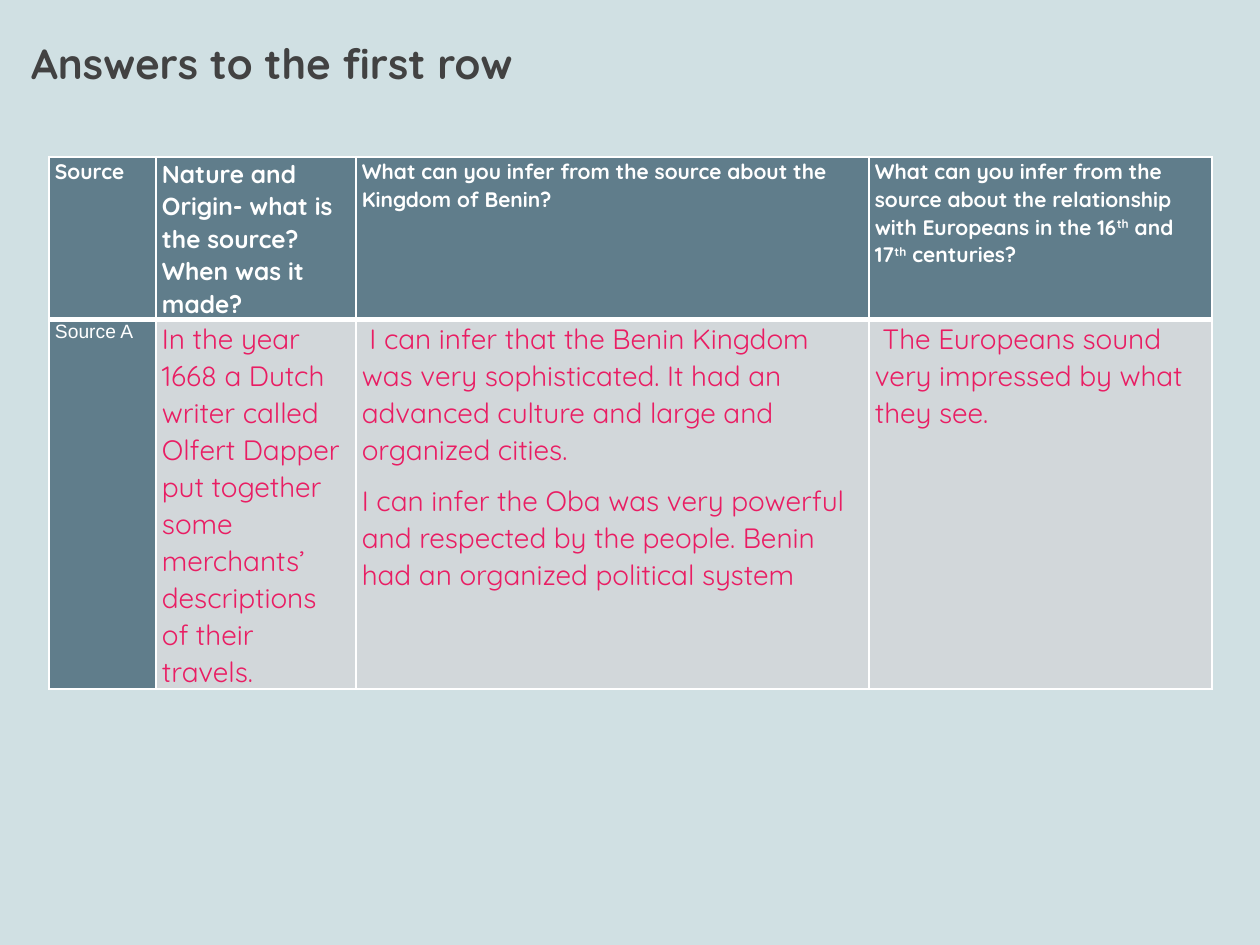
import dataclasses

import lxml.etree
import pptx
import pptx.dml.color
import pptx.enum.text
import pptx.oxml.ns
import pptx.util

PX = 7257
WHITE = "FFFFFF"
PINK = "E91D63"
SLATE = "607D8B"
PALE = "D2D7DA"
SIDES = ("lnL", "lnR", "lnT", "lnB")


@dataclasses.dataclass(frozen=True)
class TextStyle:
    size: int
    color: str = WHITE
    name: str = "Quicksand"
    bold: bool = False


@dataclasses.dataclass(frozen=True)
class CellContent:
    paragraphs: tuple[tuple[str, ...], ...]
    style: TextStyle
    fill: str = SLATE


HEADING = TextStyle(12, bold=True)
LARGE_HEADING = TextStyle(14, bold=True)
ROW_LABEL = TextStyle(11, name="Arial")
ANSWER = TextStyle(16, PINK)

COLUMN_WIDTHS = (107, 200, 513, 343)
ROW_HEIGHTS = (57, 127)
ROWS = (
    (
        CellContent((("Source",),), HEADING),
        CellContent((("Nature and Origin- what is the source? When was it made?",),), LARGE_HEADING),
        CellContent((("What can you infer from the source about the Kingdom of Benin?",),), HEADING),
        CellContent(
            ((
                "What can you infer from the source about the relationship with Europeans in the 16",
                "th", " and 17", "th", " centuries?",
            ),),
            HEADING,
        ),
    ),
    (
        CellContent((("Source A",),), ROW_LABEL),
        CellContent(
            (("In the year 1668 a Dutch writer called Olfert Dapper put together some "
              "merchants’ descriptions of their travels.",),),
            ANSWER, PALE,
        ),
        CellContent(
            (
                (" I can infer that the Benin Kingdom was very sophisticated. It had an "
                 "advanced culture and large and organized cities.",),
                ("I can infer the Oba was very powerful and respected by the people. "
                 "Benin had an organized political system",),
            ),
            ANSWER, PALE,
        ),
        CellContent(((" The Europeans sound very impressed by what they see.",),), ANSWER, PALE),
    ),
)


def px(length: int) -> pptx.util.Emu:
    return pptx.util.Emu(length * PX)


def rgb(value: str) -> pptx.dml.color.RGBColor:
    return pptx.dml.color.RGBColor.from_string(value)


def apply_format(target: object, values: dict) -> None:
    for name, value in values.items():
        setattr(target, name, value)


def apply_style(font: object, style: TextStyle) -> None:
    apply_format(font, {"size": pptx.util.Pt(style.size), "name": style.name, "bold": style.bold})
    font.color.rgb = rgb(style.color)


def add_borders(cell: object, widths: dict[str, int]) -> None:
    properties = cell._tc.get_or_add_tcPr()
    for side in SIDES:
        line = lxml.etree.SubElement(
            properties, pptx.oxml.ns.qn(f"a:{side}"), w=str(pptx.util.Pt(widths.get(side, 1)))
        )
        fill = lxml.etree.SubElement(line, pptx.oxml.ns.qn("a:solidFill"))
        lxml.etree.SubElement(fill, pptx.oxml.ns.qn("a:srgbClr"), val=WHITE)


def fill_cell(cell: object, content: CellContent, widths: dict[str, int]) -> None:
    apply_format(cell, {
        "margin_left": px(6), "margin_right": px(6), "margin_top": 0, "margin_bottom": 0,
        "vertical_anchor": pptx.enum.text.MSO_ANCHOR.TOP,
    })
    add_borders(cell, widths)
    cell.fill.solid()
    cell.fill.fore_color.rgb = rgb(content.fill)
    for index, texts in enumerate(content.paragraphs):
        para = cell.text_frame.add_paragraph() if index else cell.text_frame.paragraphs[0]
        apply_format(para, {"line_spacing": 1.06, "space_after": pptx.util.Pt(8)})
        for text in texts:
            span = para.add_run()
            span.text = text
            apply_style(span.font, content.style)
            if text == "th":
                span._r.get_or_add_rPr().set("baseline", "30000")


def add_title(page: object) -> None:
    title = page.shapes.title
    apply_format(title, {"left": px(18), "top": px(42), "width": px(567), "height": px(59)})
    apply_format(title.text_frame, {
        "text": "Answers to the first row", "word_wrap": True,
        "auto_size": pptx.enum.text.MSO_AUTO_SIZE.NONE,
        "vertical_anchor": pptx.enum.text.MSO_ANCHOR.BOTTOM,
        "margin_left": px(13), "margin_right": px(13),
        "margin_top": px(13), "margin_bottom": px(13),
    })
    para = title.text_frame.paragraphs[0]
    para.alignment = pptx.enum.text.PP_ALIGN.LEFT
    apply_style(para.runs[0].font, TextStyle(24, "424242", bold=True))


def add_answer_table(page: object) -> None:
    frame = page.shapes.add_table(
        len(ROWS), len(COLUMN_WIDTHS), px(49), px(157), px(sum(COLUMN_WIDTHS)), px(508)
    )
    table = frame.table
    for column, width in zip(table.columns, COLUMN_WIDTHS):
        column.width = px(width)
    for row, height in zip(table.rows, ROW_HEIGHTS):
        row.height = px(height)
    frame.height = px(508)
    for row, contents, widths in zip(table.rows, ROWS, ({"lnB": 3}, {"lnT": 3})):
        for cell, content in zip(row.cells, contents):
            fill_cell(cell, content, widths)


def main() -> None:
    deck = pptx.Presentation()
    apply_format(deck, {"slide_width": px(1260), "slide_height": px(945)})
    page = deck.slides.add_slide(deck.slide_layouts[5])
    page.background.fill.solid()
    page.background.fill.fore_color.rgb = rgb("D0E0E3")
    add_title(page)
    add_answer_table(page)
    deck.save("out.pptx")


if __name__ == "__main__":
    main()
